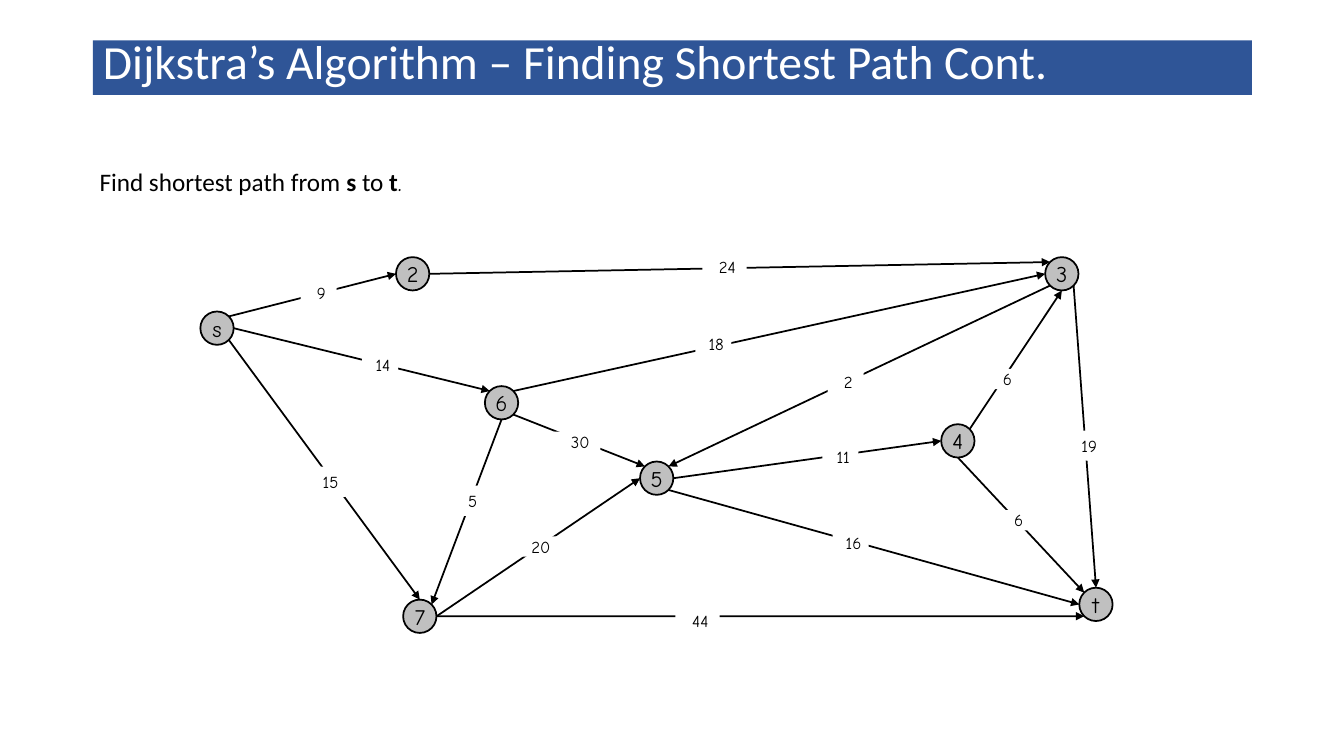
from dataclasses import dataclass
from enum import Enum
from math import sqrt

from lxml.etree import SubElement
from pptx import Presentation
from pptx.dml.color import RGBColor
from pptx.enum.shapes import MSO_CONNECTOR as Connector, MSO_SHAPE as Preset
from pptx.enum.text import MSO_ANCHOR as Anchor, MSO_AUTO_SIZE as AutoSize, PP_ALIGN as Align
from pptx.oxml.ns import qn
from pptx.shapes.autoshape import Shape
from pptx.slide import Slide
from pptx.text.text import Font
from pptx.util import Cm, Pt


@dataclass(frozen=True)
class Theme:
    banner: RGBColor = RGBColor(0x2F, 0x55, 0x97)
    paper: RGBColor = RGBColor(0xFF, 0xFF, 0xFF)
    ink: RGBColor = RGBColor(0, 0, 0)
    node: RGBColor = RGBColor(0xC0, 0xC0, 0xC0)
    text_face: str = "Calibri"
    graph_face: str = "Comic Neue"
    title_size: float = 34
    body_size: float = 18
    node_size: float = 16
    weight_size: float = 12
    line_width: float = 1.25


THEME = Theme()
DIAMETER = 0.84
RADIUS = DIAMETER / 2
DIAGONAL = RADIUS / sqrt(2)


class Port(Enum):
    TOP = (0, -RADIUS)
    BOTTOM = (0, RADIUS)
    LEFT = (-RADIUS, 0)
    RIGHT = (RADIUS, 0)
    TOP_LEFT = (-DIAGONAL, -DIAGONAL)
    TOP_RIGHT = (DIAGONAL, -DIAGONAL)
    BOTTOM_LEFT = (-DIAGONAL, DIAGONAL)
    BOTTOM_RIGHT = (DIAGONAL, DIAGONAL)


@dataclass(frozen=True)
class Node:
    name: str
    x: float
    y: float

    def at(self, port: Port) -> tuple[Cm, Cm]:
        dx, dy = port.value
        return Cm(self.x + dx), Cm(self.y + dy)


@dataclass(frozen=True)
class Edge:
    source: str
    leaves: Port
    target: str
    enters: Port
    weight: int
    label_x: float
    label_y: float
    label_width: float = 0.91
    label_height: float = 0.51


NODES = {node.name: node for node in (
    Node("s", 5.47, 8.27),
    Node("3", 26.76, 6.9),
    Node("t", 27.62, 15.23),
    Node("2", 10.4, 6.9),
    Node("6", 12.64, 10.15),
    Node("7", 10.58, 15.53),
    Node("4", 24.14, 11.11),
    Node("5", 16.55, 12.05),
)}

EDGES = (
    Edge("s", Port.TOP_RIGHT, "2", Port.LEFT, 9, 8.03, 7.37),
    Edge("s", Port.RIGHT, "6", Port.TOP_LEFT, 14, 9.58, 9.19),
    Edge("s", Port.BOTTOM_RIGHT, "7", Port.TOP, 15, 8.26, 12.14, label_height=0.76),
    Edge("6", Port.TOP_RIGHT, "3", Port.LEFT, 18, 17.98, 8.66),
    Edge("4", Port.TOP_RIGHT, "3", Port.BOTTOM, 6, 25.32, 9.55),
    Edge("6", Port.BOTTOM_RIGHT, "5", Port.TOP_LEFT, 30, 14.55, 11.13, 1.17),
    Edge("5", Port.BOTTOM_RIGHT, "t", Port.LEFT, 16, 21.44, 13.69),
    Edge("5", Port.RIGHT, "4", Port.LEFT, 11, 21.18, 11.51),
    Edge("4", Port.BOTTOM, "t", Port.TOP_LEFT, 6, 25.6, 13.11),
    Edge("3", Port.BOTTOM_LEFT, "5", Port.TOP_RIGHT, 2, 21.31, 9.63),
    Edge("6", Port.BOTTOM, "7", Port.TOP_RIGHT, 5, 11.84, 12.62, label_height=0.76),
    Edge("7", Port.RIGHT, "5", Port.LEFT, 20, 13.56, 13.77, 1.12),
    Edge("2", Port.RIGHT, "3", Port.TOP_LEFT, 24, 18.26, 6.73, 1.12),
    Edge("7", Port.RIGHT, "t", Port.BOTTOM_LEFT, 44, 17.58, 15.65, 1.12),
    Edge("3", Port.BOTTOM_RIGHT, "t", Port.TOP, 19, 27.38, 11.23, label_height=0.76),
)


def style_font(font: Font, face: str, size: float, color: RGBColor) -> None:
    font.name = face
    font.size = Pt(size)
    font.color.rgb = color


def add_centred(slide: Slide, preset: Preset, x: float, y: float, width: float,
                height: float, fill: RGBColor, text: str, size: float) -> Shape:
    shape = slide.shapes.add_shape(
        preset, Cm(x - width / 2), Cm(y - height / 2), Cm(width), Cm(height))
    shape.shadow.inherit = False
    shape.fill.solid()
    shape.fill.fore_color.rgb = fill
    shape.line.fill.background()
    frame = shape.text_frame
    frame.margin_left = frame.margin_right = frame.margin_top = frame.margin_bottom = 0
    frame.vertical_anchor = Anchor.MIDDLE
    frame.word_wrap = False
    paragraph = frame.paragraphs[0]
    paragraph.text = text
    paragraph.alignment = Align.CENTER
    style_font(paragraph.font, THEME.graph_face, size, THEME.ink)
    return shape


def add_node(slide: Slide, node: Node) -> None:
    shape = add_centred(slide, Preset.OVAL, node.x, node.y, DIAMETER, DIAMETER,
                        THEME.node, node.name, THEME.node_size)
    shape.line.color.rgb = THEME.ink
    shape.line.width = Pt(THEME.line_width)


def add_arrow(slide: Slide, edge: Edge) -> None:
    start = NODES[edge.source].at(edge.leaves)
    end = NODES[edge.target].at(edge.enters)
    arrow = slide.shapes.add_connector(Connector.STRAIGHT, *start, *end)
    arrow.line.color.rgb = THEME.ink
    arrow.line.width = Pt(THEME.line_width)
    SubElement(arrow.line._get_or_add_ln(), qn("a:tailEnd"), type="triangle")
    SubElement(arrow._element.spPr, qn("a:effectLst"))


def add_weight(slide: Slide, edge: Edge) -> None:
    add_centred(slide, Preset.RECTANGLE, edge.label_x, edge.label_y, edge.label_width,
                edge.label_height, THEME.paper, f" {edge.weight}", THEME.weight_size)


def add_title(slide: Slide, text: str) -> None:
    title = slide.shapes.title
    title.left, title.top, title.width, title.height = Cm(2.34), Cm(1.02), Cm(29.21), Cm(1.37)
    title.fill.solid()
    title.fill.fore_color.rgb = THEME.banner
    frame = title.text_frame
    frame.auto_size = AutoSize.NONE
    frame.vertical_anchor = Anchor.MIDDLE
    paragraph = frame.paragraphs[0]
    paragraph.text = text
    paragraph.alignment = Align.LEFT
    paragraph.line_spacing = 0.7
    style_font(paragraph.font, THEME.text_face, THEME.title_size, THEME.paper)


def add_task(slide: Slide) -> None:
    box = slide.shapes.add_textbox(Cm(2.26), Cm(4.06), Cm(29.06), Cm(13.49))
    box.text_frame.word_wrap = True
    paragraph = box.text_frame.paragraphs[0]
    for text, bold, face in (
        ("Find shortest path from ", False, THEME.text_face),
        ("s", True, THEME.text_face),
        (" to ", False, THEME.text_face),
        ("t", True, THEME.text_face),
        (".", False, THEME.graph_face),
    ):
        run = paragraph.add_run()
        run.text = text
        run.font.bold = bold
        style_font(run.font, face, THEME.body_size, THEME.ink)


def main() -> None:
    presentation = Presentation()
    presentation.slide_width, presentation.slide_height = Cm(33.87), Cm(19.05)
    slide = presentation.slides.add_slide(presentation.slide_layouts[5])
    add_title(slide, "Dijkstra’s Algorithm – Finding Shortest Path Cont.")
    add_task(slide)
    for node in NODES.values():
        add_node(slide, node)
    for edge in EDGES:
        add_arrow(slide, edge)
    for edge in EDGES:
        add_weight(slide, edge)
    presentation.save("out.pptx")


if __name__ == "__main__":
    main()
